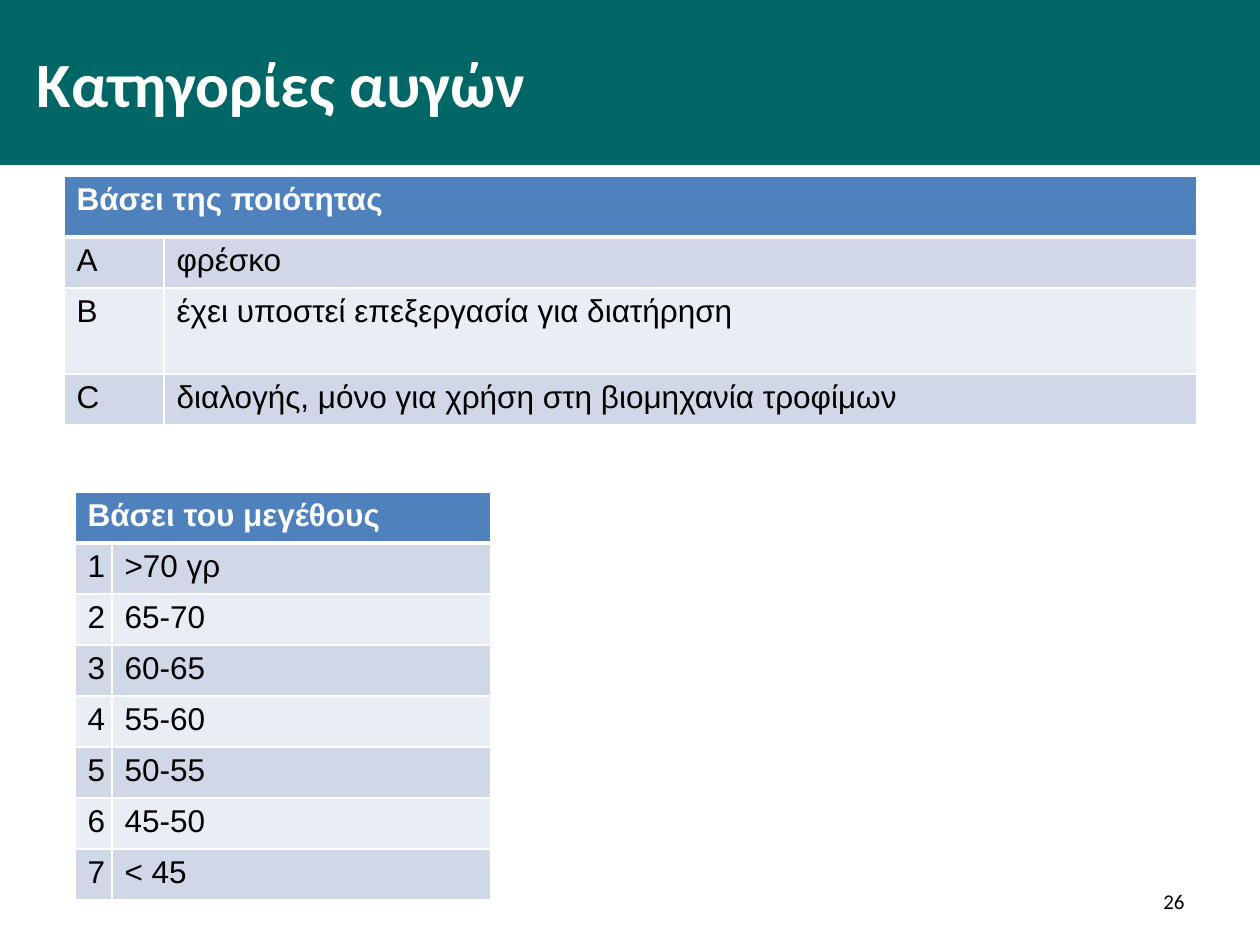
from dataclasses import dataclass

from lxml.etree import SubElement
from pptx import Presentation
from pptx.dml.color import RGBColor
from pptx.enum.text import MSO_ANCHOR, MSO_AUTO_SIZE, PP_ALIGN
from pptx.oxml.ns import qn
from pptx.util import Emu, Pt

PX_PER_INCH = 126
TEAL = RGBColor(0x00, 0x66, 0x66)
BLUE = RGBColor(0x4F, 0x81, 0xBD)
BAND_DARK = RGBColor(0xD0, 0xD8, 0xE8)
BAND_LIGHT = RGBColor(0xE9, 0xED, 0xF4)
WHITE = RGBColor(0xFF, 0xFF, 0xFF)
BLACK = RGBColor(0x00, 0x00, 0x00)

TITLE_FONT = {"name": "Calibri", "size": Pt(36), "bold": True}
HEADER_FONT = {"name": "Arial", "size": Pt(18), "bold": True}
BODY_FONT = {"name": "Arial", "size": Pt(18), "bold": False}
NUMBER_FONT = {"name": "Calibri", "size": Pt(12), "bold": False}


@dataclass(frozen=True)
class CategoryTable:
    left: int
    top: int
    col_widths: tuple[int, ...]
    row_heights: tuple[int, ...]
    header: str
    rows: tuple[tuple[str, str], ...]


QUALITY = CategoryTable(
    64, 176, (100, 1033), (61, 51, 86, 51), "Βάσει της ποιότητας",
    (("Α", "φρέσκο"),
     ("Β", "έχει υποστεί επεξεργασία για διατήρηση"),
     ("C", "διαλογής, μόνο για χρήση στη βιομηχανία τροφίμων")))

SIZES = (">70 γρ", "65-70", "60-65", "55-60", "50-55", "45-50", "< 45")
SIZE = CategoryTable(
    75, 492, (37, 379), (51,) * (len(SIZES) + 1), "Βάσει του μεγέθους",
    tuple((str(n), size) for n, size in enumerate(SIZES, 1)))


def px(value: int) -> Emu:
    return Emu(round(value * 914400 / PX_PER_INCH))


def write(tf, text: str, font: dict, color: RGBColor):
    """Fill the first paragraph with one formatted run and return it."""
    p = tf.paragraphs[0]
    r = p.add_run()
    r.text = text
    for name, value in font.items():
        setattr(r.font, name, value)
    r.font.color.rgb = color
    return p


def set_borders(cell, top: int = 1, bottom: int = 1) -> None:
    """Draw white cell borders; widths are in points."""
    tc_pr = cell._tc.get_or_add_tcPr()
    for side, width in (("L", 1), ("R", 1), ("T", top), ("B", bottom)):
        ln = SubElement(tc_pr, qn(f"a:ln{side}"), w=str(Pt(width)))
        fill = SubElement(ln, qn("a:solidFill"))
        SubElement(fill, qn("a:srgbClr"), val=str(WHITE))


def style_cell(cell, row: int) -> None:
    set_borders(cell, top=3 if row == 1 else 1, bottom=3 if row == 0 else 1)
    cell.fill.solid()
    band = BAND_DARK if row % 2 else BAND_LIGHT
    cell.fill.fore_color.rgb = BLUE if row == 0 else band


def add_category_table(s, spec_table: CategoryTable) -> None:
    t = spec_table
    frame = s.shapes.add_table(
        len(t.row_heights), len(t.col_widths), px(t.left), px(t.top),
        px(sum(t.col_widths)), px(sum(t.row_heights)))
    table = frame.table
    for col, width in zip(table.columns, t.col_widths):
        col.width = px(width)
    for row, height in zip(table.rows, t.row_heights):
        row.height = px(height)
    for i, row in enumerate(table.rows):
        for cell in row.cells:
            style_cell(cell, i)
    table.cell(0, 0).merge(table.cell(0, len(t.col_widths) - 1))
    write(table.cell(0, 0).text_frame, t.header, HEADER_FONT, WHITE)
    for i, texts in enumerate(t.rows, 1):
        for j, text in enumerate(texts):
            write(table.cell(i, j).text_frame, text, BODY_FONT, BLACK)


def place(sp, left: int, top: int, width: int, height: int) -> None:
    sp.left, sp.top, sp.width, sp.height = map(px, (left, top, width, height))


def add_title(s, text: str) -> None:
    sp = s.shapes.title
    place(sp, 0, 0, 1260, 165)
    sp.fill.solid()
    sp.fill.fore_color.rgb = TEAL
    tf = sp.text_frame
    tf.auto_size = MSO_AUTO_SIZE.NONE
    tf.vertical_anchor = MSO_ANCHOR.MIDDLE
    p = write(tf, text, TITLE_FONT, WHITE)
    p.alignment = PP_ALIGN.LEFT
    p_pr = p._p.get_or_add_pPr()
    p_pr.set("marL", str(px(24)))
    p_pr.set("indent", "0")


def add_slide_number(s, text: str) -> None:
    sp = s.shapes.add_textbox(px(903), px(876), px(294), px(50))
    tf = sp.text_frame
    tf.word_wrap = True
    tf.vertical_anchor = MSO_ANCHOR.MIDDLE
    write(tf, text, NUMBER_FONT, BLACK).alignment = PP_ALIGN.RIGHT


def main() -> None:
    prs = Presentation()
    prs.slide_width, prs.slide_height = px(1260), px(945)
    s = prs.slides.add_slide(prs.slide_layouts[5])
    add_title(s, "Κατηγορίες αυγών")
    add_category_table(s, QUALITY)
    add_slide_number(s, "26")
    add_category_table(s, SIZE)
    prs.save("out.pptx")


if __name__ == "__main__":
    main()
